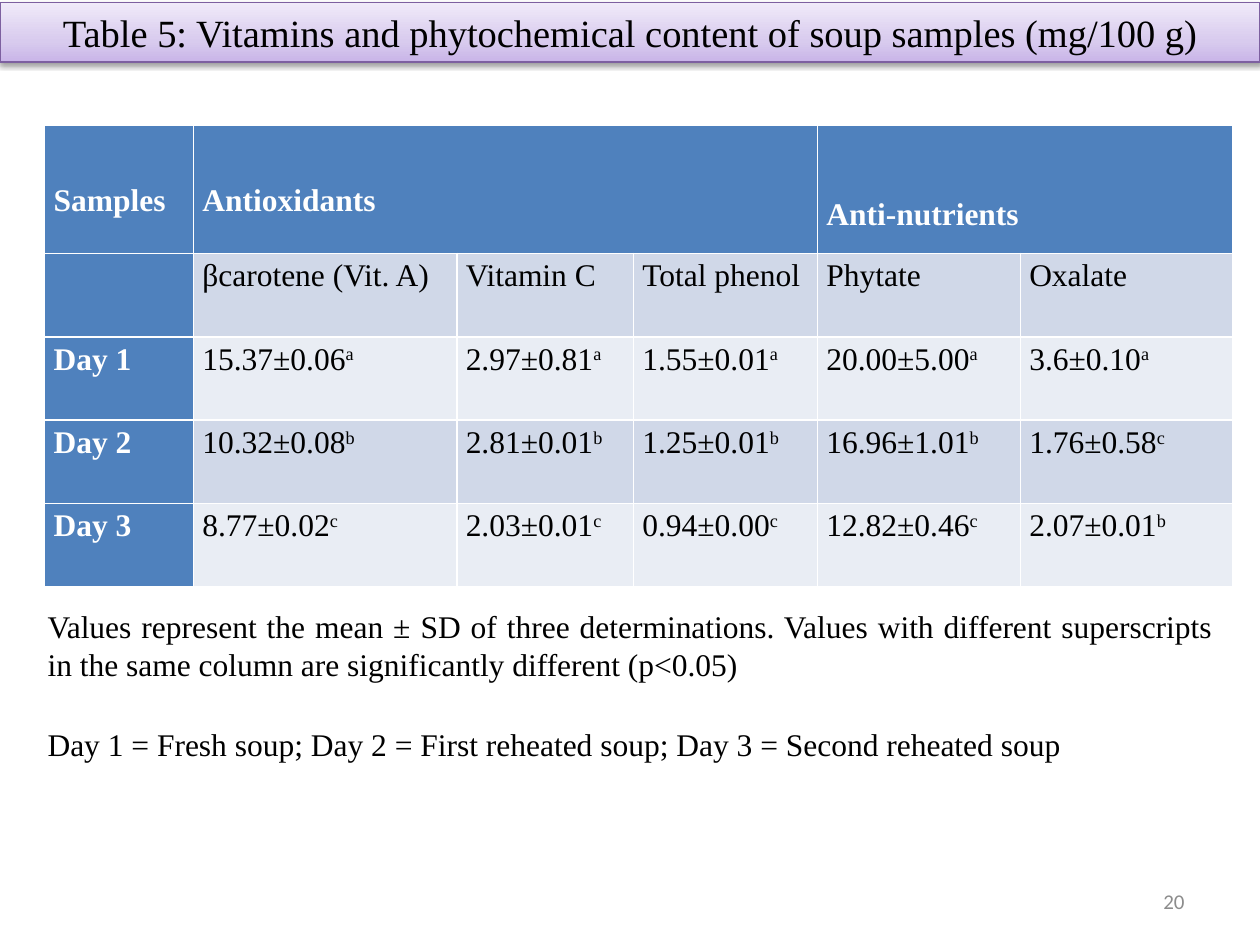
"""Build the slide on vitamins and phytochemicals in soup samples."""
from pptx import Presentation
from pptx.dml.color import RGBColor
from pptx.enum.shapes import MSO_SHAPE as Shape
from pptx.enum.text import MSO_ANCHOR as Anchor, PP_ALIGN as Align
from pptx.oxml import parse_xml
from pptx.oxml.ns import nsdecls, qn
from pptx.util import Cm, Pt

BLACK = RGBColor(0x00, 0x00, 0x00)
WHITE = RGBColor(0xFF, 0xFF, 0xFF)
GREY = RGBColor(0x8C, 0x8C, 0x8C)
BLUE = RGBColor(0x4F, 0x81, 0xBD)
BAND_DARK = RGBColor(0xD0, 0xD8, 0xE8)
BAND_LIGHT = RGBColor(0xE9, 0xED, 0xF4)
PURPLE = RGBColor(0x7D, 0x60, 0xA0)
LILACS = [(0, RGBColor(0xC9, 0xB5, 0xE8)), (35, RGBColor(0xD8, 0xCB, 0xEE)),
          (100, RGBColor(0xF0, 0xEA, 0xF9))]
SERIF = {"name": "Times New Roman", "size": Pt(18)}


def write(frame, text, alignment, color, superscript="", spacing=1.0, **font):
    paragraph = frame.paragraphs[0]
    paragraph.alignment = alignment
    paragraph.line_spacing = spacing
    for part in filter(None, (text, superscript)):
        run = paragraph.add_run()
        run.text = part
        run.font.color.rgb = color
        for name, value in {**SERIF, **font}.items():
            setattr(run.font, name, value)
    if superscript:
        run.font._element.set("baseline", "30000")


presentation = Presentation()
presentation.slide_width, presentation.slide_height = Cm(25.4), Cm(19.05)
slide = presentation.slides.add_slide(presentation.slide_layouts[6])

banner = slide.shapes.add_shape(Shape.RECTANGLE, Cm(0), Cm(0.05), Cm(25.4), Cm(1.2))
banner.fill.gradient()
banner.fill.gradient_angle = 90
banner.line.color.rgb = PURPLE
banner.line.width = Pt(0.75)
banner.shadow.inherit = False
properties = banner._element.spPr
stops = properties.find(qn("a:gradFill")).find(qn("a:gsLst"))
stops.clear()
for position, color in LILACS:
    stops.append(parse_xml(f'<a:gs {nsdecls("a")} pos="{position * 1000}">'
                           f'<a:srgbClr val="{color}"/></a:gs>'))
properties.find(qn("a:effectLst")).append(parse_xml(
    f'<a:outerShdw {nsdecls("a")} blurRad="{Pt(3.1)}" dist="{Pt(1.6)}" dir="5400000" '
    'rotWithShape="0"><a:srgbClr val="000000"><a:alpha val="38000"/></a:srgbClr></a:outerShdw>'))
banner.text_frame.vertical_anchor = Anchor.MIDDLE
banner.text_frame.word_wrap = True
write(banner.text_frame, "Table 5: Vitamins and phytochemical content of soup samples (mg/100 g)",
      Align.CENTER, BLACK, size=Pt(22))

column_widths = [3, 5.31, 3.56, 3.71, 4.09, 4.29]
row_heights = [2.59] + [1.68] * 4
rows = [
    ["Samples", "Antioxidants", "", "", "Anti-nutrients", ""],
    ["", "βcarotene (Vit. A)", "Vitamin C", "Total phenol ", "Phytate", "Oxalate"],
    ["Day 1", "15.37±0.06^a", "2.97±0.81^a", "1.55±0.01^a", "20.00±5.00^a", "3.6±0.10^a"],
    ["Day 2", "10.32±0.08^b", "2.81±0.01^b", "1.25±0.01^b", "16.96±1.01^b", "1.76±0.58^c"],
    ["Day 3", "8.77±0.02^c", "2.03±0.01^c", "0.94±0.00^c", "12.82±0.46^c", "2.07±0.01^b"],
]
table = slide.shapes.add_table(len(rows), len(column_widths), Cm(0.9), Cm(2.52),
                               Cm(sum(column_widths)), Cm(sum(row_heights))).table
table.first_col = True
for column, width in zip(table.columns, column_widths):
    column.width = Cm(width)
for row, height in zip(table.rows, row_heights):
    row.height = Cm(height)
for first, last in [(1, 3), (4, 5)]:
    table.cell(0, first).merge(table.cell(0, last))

header_tops = {"Samples": 1.07, "Antioxidants": 1.07, "Anti-nutrients": 1.46}
for row_index, texts in enumerate(rows):
    for column_index, text in enumerate(texts):
        cell = table.cell(row_index, column_index)
        heading = row_index == 0 or column_index == 0
        cell.fill.solid()
        cell.fill.fore_color.rgb = BLUE if heading else (BAND_LIGHT, BAND_DARK)[row_index % 2]
        margins = {"margin_left": 0.18, "margin_right": 0.18, "margin_bottom": 0,
                   "margin_top": header_tops.get(text, 0)}
        for name, value in margins.items():
            setattr(cell, name, Cm(value))
        value, _, superscript = text.partition("^")
        write(cell.text_frame, value, Align.LEFT if row_index == 0 else Align.JUSTIFY,
              WHITE if heading else BLACK, superscript, bold=heading,
              spacing=1.0 if text == "Anti-nutrients" else 1.15)

notes = [
    (12.12, 2.24, 1.0, "Values represent the mean ± SD of three determinations. Values with "
     "different superscripts in the same column are significantly different (p<0.05)"),
    (14.12, 1.42, 1.5,
     "Day 1 = Fresh soup; Day 2 = First reheated soup; Day 3 = Second reheated soup"),
]
for top, height, spacing, text in notes:
    note = slide.shapes.add_textbox(Cm(0.71), Cm(top), Cm(24), Cm(height))
    note.text_frame.word_wrap = True
    write(note.text_frame, text, Align.JUSTIFY, BLACK, spacing=spacing)

page_number = slide.shapes.add_textbox(Cm(18.21), Cm(17.65), Cm(5.92), Cm(1.02))
page_number.text_frame.word_wrap = True
page_number.text_frame.vertical_anchor = Anchor.MIDDLE
write(page_number.text_frame, "20", Align.RIGHT, GREY, name="Calibri", size=Pt(12))

presentation.save("out.pptx")
